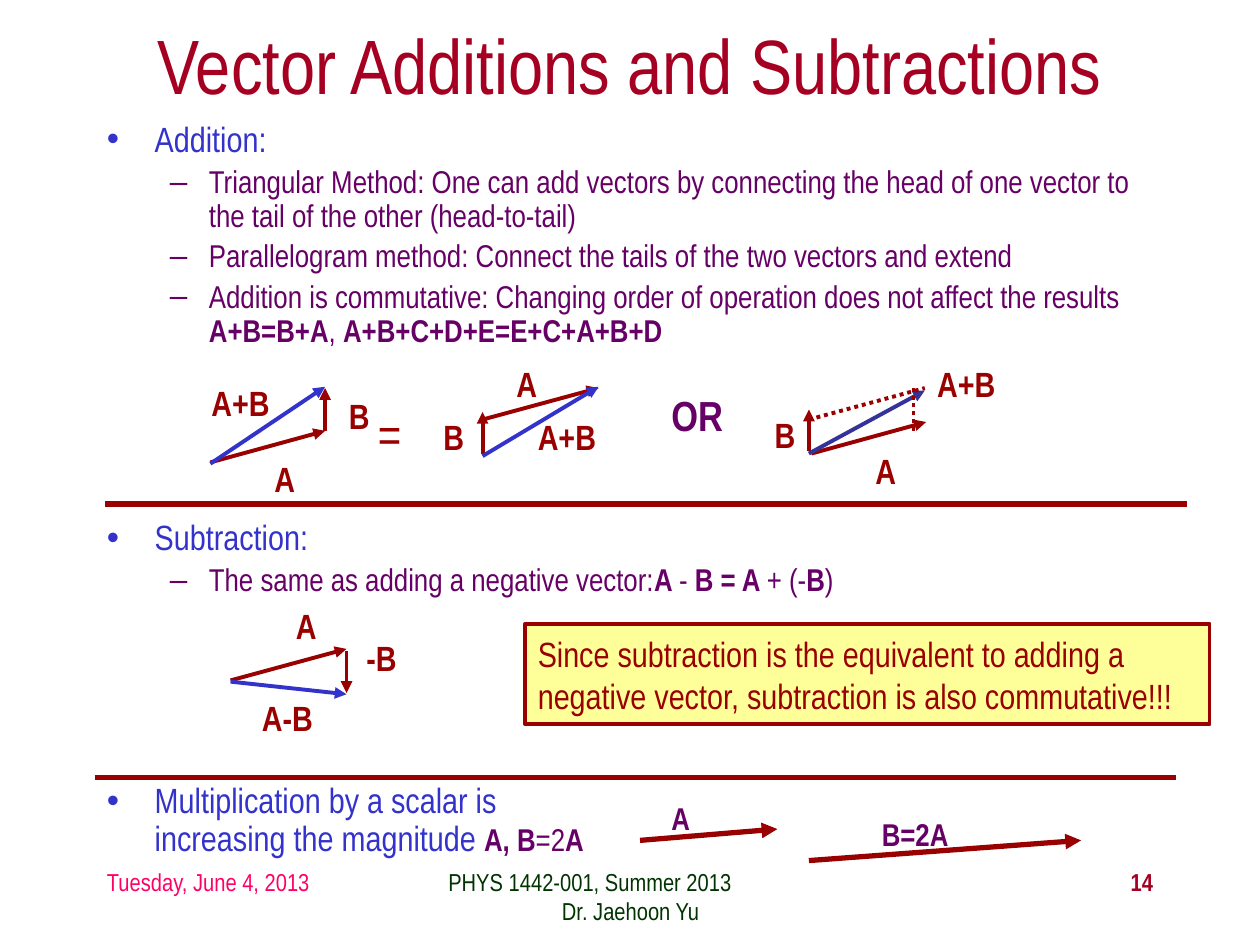
import pptx
import pptx.util
import pptx.dml.color
import pptx.enum.dml
import pptx.enum.shapes
import pptx.enum.text
import pptx.oxml.ns
from lxml import etree

Inches = pptx.util.Inches
Pt = pptx.util.Pt
Align = pptx.enum.text.PP_ALIGN
Auto = pptx.enum.text.MSO_AUTO_SIZE
FONT = "Arial Narrow"
HUES = {"title": "A50021", "red": "990000", "blue": "3333CC", "navy": "333399",
        "plum": "660066", "pink": "FF0066", "green": "003300", "cream": "FFFF99"}


def tint(name):
    return pptx.dml.color.RGBColor.from_string(HUES[name])


def add_node(parent, tag, **attrs):
    return etree.SubElement(parent, pptx.oxml.ns.qn(tag), attrs)


def style(run, size, hue, bold=False):
    run.font.name = FONT
    run.font.size = Pt(size)
    run.font.bold = bold
    run.font.color.rgb = tint(hue)


def write(par, text, size, hue, bold=False):
    run = par.add_run()
    run.text = text
    style(run, size, hue, bold)


def text_box(slide, box):
    frame = slide.shapes.add_textbox(*map(Inches, box)).text_frame
    frame.word_wrap = True
    return frame


def label(slide, box, text, size=20, hue="red", bold=True):
    frame = text_box(slide, box)
    frame.word_wrap = False
    frame.auto_size = Auto.SHAPE_TO_FIT_TEXT
    write(frame.paragraphs[0], text, size, hue, bold)


def line(slide, start, end, hue="red", width=2.25, head=True, dots=False):
    link = slide.shapes.add_connector(
        pptx.enum.shapes.MSO_CONNECTOR.STRAIGHT, *map(Inches, (*start, *end)))
    link.line.color.rgb = tint(hue)
    link.line.width = Pt(width)
    if dots:
        link.line.dash_style = pptx.enum.dml.MSO_LINE.ROUND_DOT
    if head:
        add_node(link.line._get_or_add_ln(), "a:tailEnd", type="triangle")
    add_node(link._element.spPr, "a:effectLst")


def bullets(slide, box, items):
    frame = text_box(slide, box)
    for index, (level, parts) in enumerate(items):
        par = frame.paragraphs[0] if index == 0 else frame.add_paragraph()
        left, hang, mark = ((0.38, 0.38, "•"), (0.81, 0.31, "–"))[level]
        par.level = level
        props = par._p.get_or_add_pPr()
        props.set("marL", str(Inches(left)))
        props.set("indent", str(-Inches(hang)))
        add_node(props, "a:buFont", typeface="Arial")
        add_node(props, "a:buChar", char=mark)
        par.line_spacing = 0.9
        if index:
            par.space_before = Pt(3.6)
        for text, kind in parts:
            if kind == "head":
                write(par, text, 20, "blue")
            else:
                write(par, text, 18, "plum", kind == "bold")


def sketch(slide, spot, arrows, names):
    x, y = spot
    for x1, y1, x2, y2, hue, dots in arrows:
        line(slide, (x + x1, y + y1), (x + x2, y + y2), hue, head=not dots, dots=dots)
    for text, dx, dy, wide in names:
        label(slide, (x + dx, y + dy, wide, 0.43), text)


def heading(slide, box):
    title = slide.shapes.title
    title.left, title.top, title.width, title.height = map(Inches, box)
    frame = title.text_frame
    frame.text = "Vector Additions and Subtractions"
    frame.auto_size = Auto.NONE
    frame.vertical_anchor = pptx.enum.text.MSO_ANCHOR.MIDDLE
    frame.paragraphs[0].alignment = Align.CENTER
    style(frame.paragraphs[0].runs[0], 44, "title")


def addition(slide, box):
    x, y, wide, tall = box
    bullets(slide, (x, y, wide, 1.83), [
        (0, [("Addition:", "head")]),
        (1, [("Triangular Method: One can add vectors by connecting the head of "
              "one vector to the tail of the other (head-to-tail)", "")]),
        (1, [("Parallelogram method: Connect the tails of the two vectors and extend", "")]),
        (1, [("Addition is commutative: Changing order of operation does not "
              "affect the results ", ""),
             ("A+B=B+A", "bold"), (", ", ""), ("A+B+C+D+E=E+C+A+B+D", "bold")])])
    base = y + 2.15
    sketch(slide, (x + 0.92, base),
           [(0, 0.6, 0.91, 0.35, "red", False), (0.91, 0.35, 0.91, 0.01, "red", False),
            (0, 0.61, 0.91, 0, "blue", False)],
           [("A", 0.41, 0.51, 0.37), ("B", 1, 0.01, 0.37), ("A+B", -0.09, -0.09, 0.66)])
    label(slide, (x + 2.15, base + 0.08, 0.39, 0.57), "=", 28, bold=False)
    sketch(slide, (x + 3.08, base),
           [(0, 0.26, 0.92, 0.01, "red", False), (0, 0.53, 0, 0.2, "red", False),
            (0, 0.55, 0.92, 0, "blue", False)],
           [("A", 0.17, -0.24, 0.37), ("B", -0.41, 0.18, 0.37), ("A+B", 0.34, 0.18, 0.66)])
    label(slide, (x + 4.48, base - 0.03, 0.61, 0.5), "OR", 24, "plum")
    sketch(slide, (x + 5.67, base),
           [(0.02, 0.53, 0.93, 0.28, "red", False), (0, 0.51, 0, 0.18, "red", False),
            (0, 0.53, 0.92, 0.03, "navy", False), (0.83, 0.35, 0.83, 0.01, "red", True),
            (0, 0.26, 0.92, 0.01, "red", True)],
           [("A", 0.43, 0.45, 0.37), ("B", -0.37, 0.16, 0.37), ("A+B", 0.92, -0.24, 0.66)])
    line(slide, (x + 0.08, y + tall), (x + 8.67, y + tall), width=3, head=False)


def remark(slide, box):
    note = slide.shapes.add_shape(pptx.enum.shapes.MSO_SHAPE.RECTANGLE, *map(Inches, box))
    note.shadow.inherit = False
    note.fill.solid()
    note.fill.fore_color.rgb = tint("cream")
    note.line.color.rgb = tint("red")
    note.line.width = Pt(2.25)
    par = note.text_frame.paragraphs[0]
    par.alignment = Align.LEFT
    write(par, "Since subtraction is the equivalent to adding a negative vector, "
          "subtraction is also commutative!!!", 20, "red")


def subtraction(slide, box):
    x, y, wide, tall = box
    bullets(slide, (x, y, wide, 0.83), [
        (0, [("Subtraction:", "head")]),
        (1, [("The same as adding a negative vector:", ""), ("A ", "bold"), ("- ", ""),
             ("B = A ", "bold"), ("+ (-", ""), ("B", "bold"), (")", "")])])
    sketch(slide, (x + 1.08, y + 1.07),
           [(0, 0.25, 0.92, 0, "red", False), (0.92, 0.02, 0.92, 0.35, "red", False),
            (0, 0.26, 0.92, 0.36, "blue", False)],
           [("A", 0.42, -0.4, 0.37), ("-B", 0.98, -0.15, 0.44), ("A-B", 0.15, 0.33, 0.61)])
    remark(slide, (x + 3.42, y + 0.87, 5.43, 0.8))
    line(slide, (x, y + tall), (x + 8.58, y + tall), width=3, head=False)


def scaling(slide, box):
    x, y, wide, tall = box
    bullets(slide, (x, y, 4, tall), [
        (0, [("Multiplication by a scalar is increasing the magnitude ", "head"),
             ("A, B", "bold"), ("=2", ""), ("A", "bold")])])
    line(slide, (x + 4.33, y + 0.5), (x + 5.42, y + 0.41), width=3)
    label(slide, (x + 4.48, y + 0.12, 0.35, 0.4), "A", 18, "plum")
    line(slide, (x + 5.67, y + 0.66), (x + 7.83, y + 0.5), width=3)
    label(slide, (x + 6.15, y + 0.25, 0.73, 0.4), "B=2A", 18, "plum")


def footer(slide, box):
    x, y, wide, tall = box
    date = text_box(slide, (x, y, 2.08, tall)).paragraphs[0]
    write(date, "Tuesday, June 4, 2013", 14, "pink")
    course = text_box(slide, (x + 2.67, y, 3.17, tall))
    first = course.paragraphs[0]
    first._p.get_or_add_pPr().set("marL", str(Inches(0.04)))
    write(first, "PHYS 1442-001, Summer 2013", 14, "green")
    second = course.add_paragraph()
    second.alignment = Align.CENTER
    write(second, "Dr. Jaehoon Yu", 14, "green")
    page = text_box(slide, (x + wide - 2.08, y, 2.08, tall)).paragraphs[0]
    page.alignment = Align.RIGHT
    write(page, "14", 14, "title", True)


def main():
    deck = pptx.Presentation()
    deck.slide_width, deck.slide_height = Inches(10), Inches(7.5)
    slide = deck.slides.add_slide(deck.slide_layouts[5])
    left, wide = 0.75, 8.5
    heading(slide, (left, 0.17, wide, 0.67))
    addition(slide, (left, 0.92, wide, 3.08))
    subtraction(slide, (left, 4.08, wide, 2.09))
    scaling(slide, (left, 6.17, wide, 0.67))
    footer(slide, (left, 6.83, wide, 0.5))
    deck.save("out.pptx")


if __name__ == "__main__":
    main()
